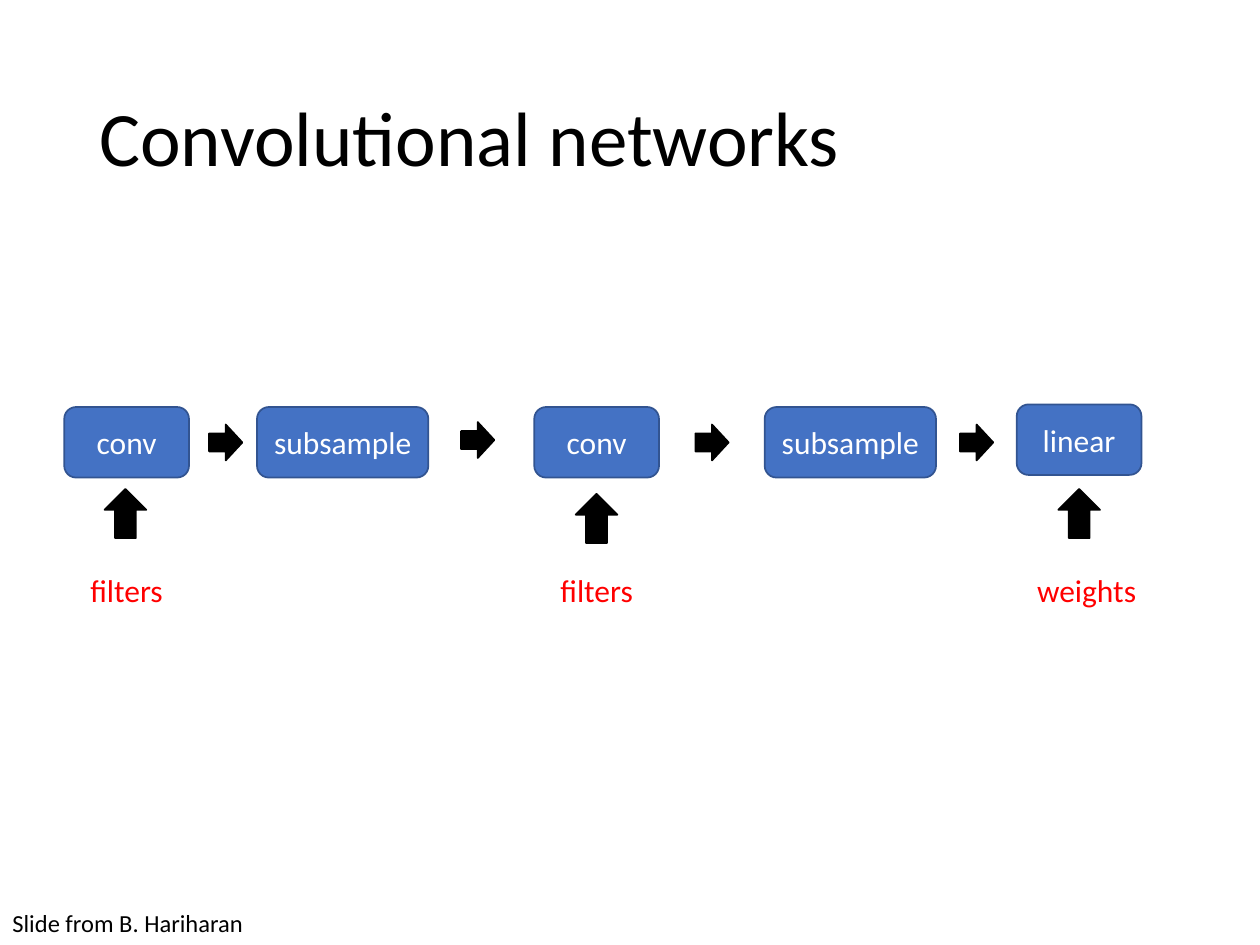
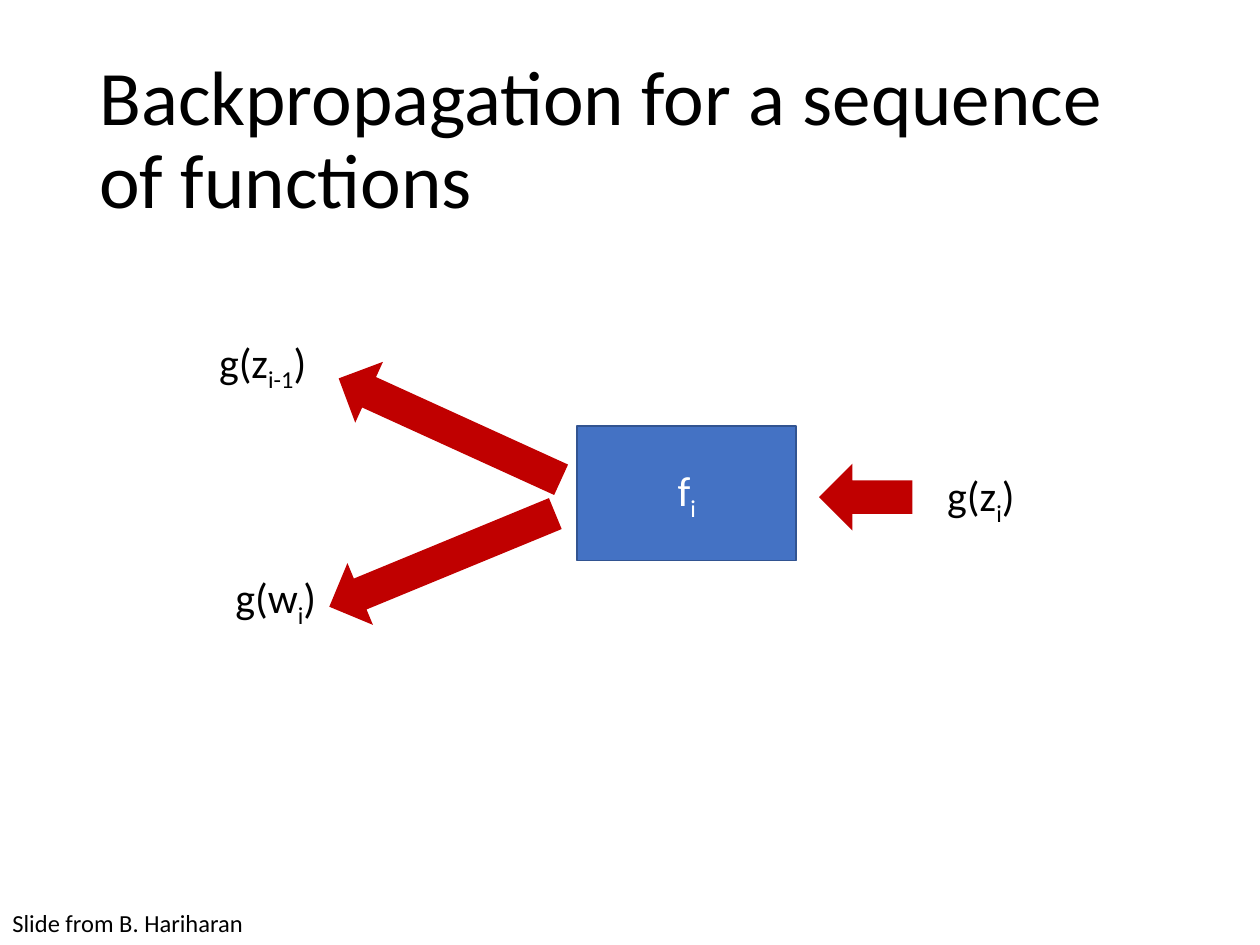
import pptx
import pptx.util
import pptx.dml.color
import pptx.enum.shapes
import pptx.enum.text

Pt = pptx.util.Pt
KIND = pptx.enum.shapes.MSO_SHAPE
ALIGN = pptx.enum.text.PP_ALIGN
ANCHOR = pptx.enum.text.MSO_ANCHOR
FONT = "Calibri"
BLUE, EDGE, RED, DARK = "4472C4", "325491", "C00000", "000000"
WHITE, LABEL = "FFFFFF", "FF0000"


def color(code):
    """Turn a hex string into a colour."""
    return pptx.dml.color.RGBColor.from_string(code)


def write(shape, text, size=18, ink=DARK, align=ALIGN.LEFT, anchor=ANCHOR.TOP, space=None):
    """Fill a shape with text, where parts between bars are subscripts."""
    frame = shape.text_frame
    frame.word_wrap = True
    frame.vertical_anchor = anchor
    para = frame.paragraphs[0]
    para.alignment = align
    para.line_spacing = space
    for index, part in enumerate(text.split("|")):
        run = para.add_run()
        run.text = part
        run.font.name = FONT
        run.font.size = Pt(size)
        run.font.color.rgb = color(ink)
        if index % 2:
            run.font._element.set("baseline", "-25000")


def label(slide, box, text, **style):
    """Add a text box."""
    write(slide.shapes.add_textbox(*map(Pt, box)), text, **style)


def draw(slide, kind, box, fill=None, line=None, turn=0):
    """Add a preset shape with plain fill and line."""
    shape = slide.shapes.add_shape(kind, *map(Pt, box))
    shape.shadow.inherit = False
    shape.rotation = turn
    if fill:
        shape.fill.solid()
        shape.fill.fore_color.rgb = color(fill)
    else:
        shape.fill.background()
    if line:
        shape.line.color.rgb = color(line)
        shape.line.width = Pt(1)
    else:
        shape.line.fill.background()
    return shape


def block(slide, kind, box, text, fill=None, line=None, size=18, ink=WHITE):
    """Add a shape with centred text."""
    shape = draw(slide, kind, box, fill, line)
    write(shape, text, size=size, ink=ink, align=ALIGN.CENTER, anchor=ANCHOR.MIDDLE)


def start(deck, title):
    """Add a slide with its title and credit."""
    slide = deck.slides.add_slide(deck.slide_layouts[6])
    label(slide, (49.7, 28.8, 620.6, 104.4), title, size=44, anchor=ANCHOR.MIDDLE, space=0.9)
    label(slide, (0, 515.5, 149, 24.5), "Slide from B. Hariharan", size=14)
    return slide


def network(slide, left, top):
    """Draw the chain of layers and their inputs."""
    layers = [("conv", 0, 1.5, 71.3), ("subsample", 110.2, 1.5, 97.9),
              ("conv", 268.6, 1.5, 71.3), ("subsample", 400.3, 1.5, 97.9),
              ("linear", 544.3, 0, 71.3)]
    for text, x, y, width in layers:
        block(slide, KIND.ROUNDED_RECTANGLE, (left + x, top + y, width, 40.3), text, BLUE, EDGE)
    for x, y in [(82.8, 11.5), (226.8, 10.1), (360.7, 11.5), (511.9, 11.5)]:
        draw(slide, KIND.RIGHT_ARROW, (left + x, top + y, 19, 20.5), DARK, DARK)
    inputs = [("filters", 0, 71.3, 23.1, 48.3), ("filters", 268.6, 71.3, 292.3, 51.1),
              ("weights", 544.3, 79.9, 568.1, 48.3)]
    for text, x, width, tip, y in inputs:
        block(slide, KIND.ROUNDED_RECTANGLE, (left + x, top + 87.9, width, 36.7), text, ink=LABEL)
        draw(slide, KIND.UP_ARROW, (left + tip, top + y, 23.8, 28.1), DARK, DARK)


def backprop(slide, left, top):
    """Draw one function with its gradients."""
    block(slide, KIND.RECTANGLE, (left + 211.7, top + 54.8, 125.3, 77), "f|i", BLUE, EDGE, size=24)
    for text, x, y, width in [("g(z|i-1|)", 0, 0, 74.2), ("g(z|i|)", 416.1, 76.4, 85.7),
                              ("g(w|i|)", 9.3, 134.7, 85.7)]:
        label(slide, (left + x, top + y, width, 36), text, size=24)
    for x, y, width, turn in [(349.9, 76.4, 53.3, 180), (69.1, 37.5, 139.7, 204.5),
                              (64.8, 112.4, 139.7, 157.6)]:
        draw(slide, KIND.RIGHT_ARROW, (left + x, top + y, width, 38.2), RED, turn=turn)


def main():
    """Build and save the deck."""
    deck = pptx.Presentation()
    deck.slide_width, deck.slide_height = Pt(720), Pt(540)
    network(start(deck, "Convolutional networks"), 36.7, 231.1)
    backprop(start(deck, "Backpropagation for a sequence of functions"), 118.1, 188.6)
    deck.save("out.pptx")


if __name__ == "__main__":
    main()
